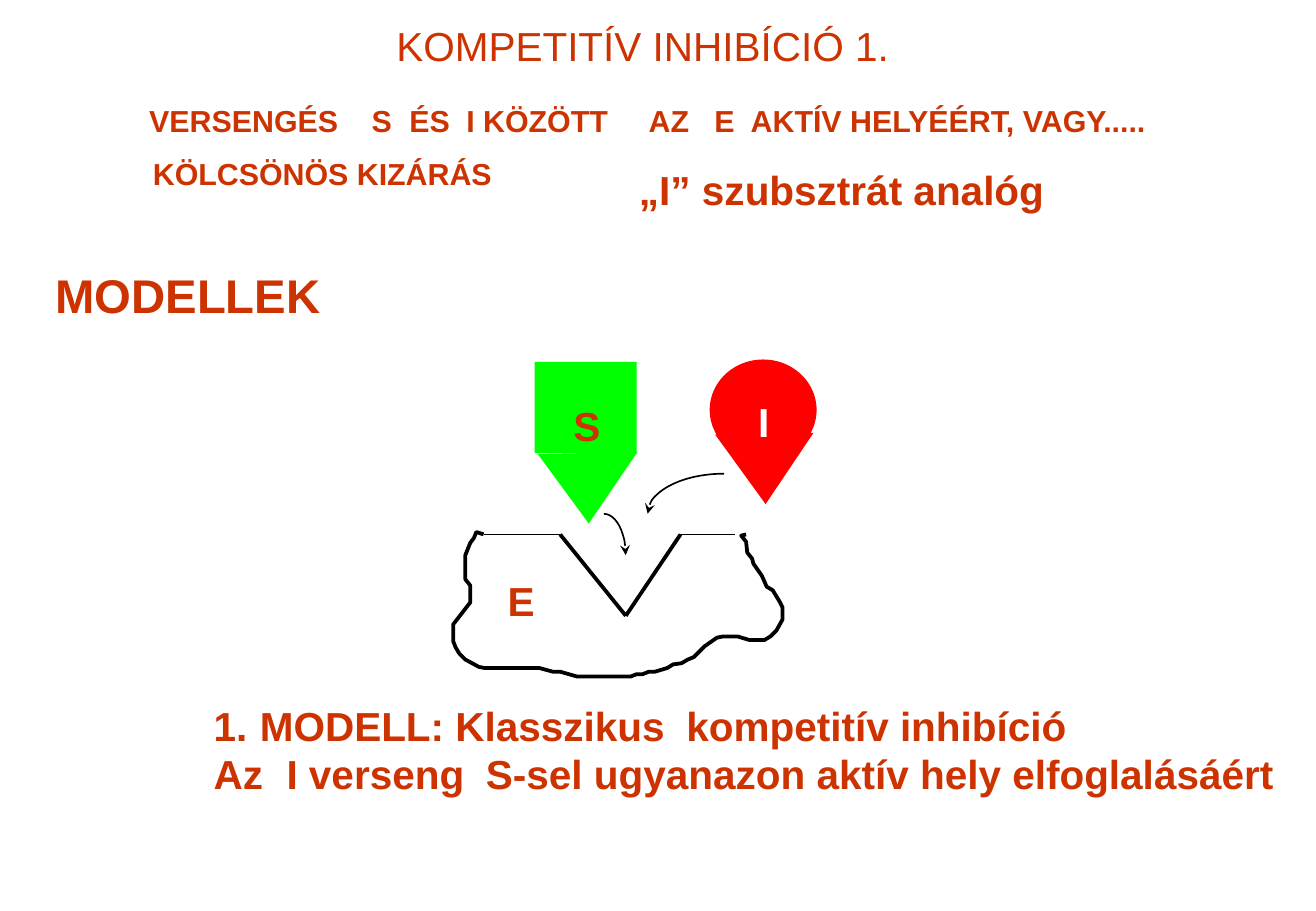
from dataclasses import dataclass

from lxml import etree
from pptx import Presentation
from pptx.dml.color import RGBColor
from pptx.enum.shapes import MSO_CONNECTOR, MSO_SHAPE
from pptx.enum.text import MSO_ANCHOR, PP_ALIGN
from pptx.oxml.ns import qn
from pptx.util import Inches, Pt

RECT, OVAL, ARC = MSO_SHAPE.RECTANGLE, MSO_SHAPE.OVAL, MSO_SHAPE.ARC
TRIANGLE = MSO_SHAPE.ISOSCELES_TRIANGLE
LINE = MSO_CONNECTOR.STRAIGHT
MIDDLE, CENTER, LEFT = MSO_ANCHOR.MIDDLE, PP_ALIGN.CENTER, PP_ALIGN.LEFT


@dataclass(frozen=True)
class Theme:
    font: str = "Arial"
    text: str = "CC3300"
    ink: str = "000000"
    light: str = "FFFFFF"
    substrate: str = "00FF00"
    inhibitor: str = "FF0000"
    small: float = 18
    body: float = 24
    large: float = 28
    thin: float = 1
    thick: float = 2.25


T = Theme()
COLS, ROWS = 1083, 750  # grid of 100 cells to the inch
CELL = Inches(0.01)

# Boxes are (column, row, width, height); a paragraph is (text, tab stops, numbered)
TITLE = ("KOMPETITÍV INHIBÍCIÓ 1.", (107, 0, 844, 75))
TEXTS = [
    ((113, 79, 880, 40), T.small,
     [("VERSENGÉS\tS\tÉS\tI KÖZÖTT\tAZ\tE\tAKTÍV HELYÉÉRT, VAGY.....",
       (183, 214, 261, 411, 465, 495), False)]),
    ((116, 123, 316, 40), T.small, [("KÖLCSÖNÖS KIZÁRÁS", (), False)]),
    ((516, 131, 459, 50), T.body, [("„I” szubsztrát analóg", (), False)]),
    ((36, 214, 260, 57), T.large, [("MODELLEK", (), False)]),
    ((166, 572, 917, 91), T.body,
     [("MODELL: Klasszikus\tkompetitív inhibíció", (389,), True),
      ("Az\tI verseng\tS-sel ugyanazon aktív hely elfoglalásáért", (60, 224), False)]),
]
NUMBER_INDENT = 38
INHIBITOR = [(TRIANGLE, (589, 357, 81, 58)), (OVAL, (584, 296, 88, 83))]
SUBSTRATE = [(RECT, (440, 298, 84, 75)), (TRIANGLE, (443, 373, 82, 58))]
LABELS = [("I", (614, 322, 30, 51), T.light),
          ("S", (462, 325, 43, 51), T.text),
          ("E", (408, 469, 43, 51), T.text)]
SURFACE = [(398, 440), (461, 440), (515, 507), (560, 440), (605, 440)]
SURFACE_WIDTHS = [T.thin, T.thick, T.thick, T.thin]
ENZYME = [
    (398, 440), (392, 438), (390, 443), (387, 447), (383, 457), (383, 477),
    (387, 482), (387, 496), (373, 514), (373, 528), (375, 533), (378, 538),
    (383, 543), (394, 549), (399, 550), (444, 550), (455, 553), (461, 553),
    (475, 557), (519, 557), (524, 555), (529, 555), (534, 553), (539, 553),
    (549, 550), (554, 547), (561, 546), (566, 543), (571, 541), (576, 536),
    (580, 532), (590, 525), (595, 524), (607, 524), (617, 527), (629, 527),
    (634, 524), (639, 519), (644, 510), (644, 500), (642, 496), (636, 486),
    (631, 483), (627, 474), (620, 464), (619, 460), (615, 455), (614, 446),
    (610, 441), (614, 440)]
# Quarter arcs: centre, radii, start and end angle, end that has the arrowhead
ARROWS = [((497, 457), (18, 34), (270, 0), "tailEnd"),
          ((596, 423), (63, 33), (180, 270), "headEnd")]


def grid(cells):
    return [round(c * CELL) for c in cells]


def add_run(p, text, size, color=T.text, bold=True):
    r = p.add_run()
    r.text = text
    r.font.name, r.font.size, r.font.bold = T.font, Pt(size), bold
    r.font.color.rgb = RGBColor.from_string(color)
    return r


def add_box(slide, box, wrap=True):
    tf = slide.shapes.add_textbox(*grid(box)).text_frame
    tf.word_wrap = wrap
    return tf


def set_layout(p, tabs, numbered):
    """Give a paragraph its number and its tab stops."""
    pPr = p._p.get_or_add_pPr()
    if numbered:
        indent = round(NUMBER_INDENT * CELL)
        pPr.set("marL", str(indent))
        pPr.set("indent", str(-indent))
        etree.SubElement(pPr, qn("a:buAutoNum"), type="arabicPeriod")
    if tabs:
        tab_list = etree.SubElement(pPr, qn("a:tabLst"))
        for pos in grid(tabs):
            etree.SubElement(tab_list, qn("a:tab"), pos=str(pos), algn="l")


def add_text(slide, box, size, paragraphs):
    tf = add_box(slide, box)
    for i, (text, tabs, numbered) in enumerate(paragraphs):
        p = tf.add_paragraph() if i else tf.paragraphs[0]
        p.alignment = LEFT
        set_layout(p, tabs, numbered)
        add_run(p, text, size)


def add_title(slide, text, box):
    tf = add_box(slide, box)
    tf.vertical_anchor = MIDDLE
    p = tf.paragraphs[0]
    p.alignment = CENTER
    r = add_run(p, text, T.body, bold=False)
    effects = etree.Element(qn("a:effectLst"))
    shadow = etree.SubElement(effects, qn("a:outerShdw"), dist="25400", dir="2700000")
    etree.SubElement(shadow, qn("a:srgbClr"), val=T.ink)
    r.font.fill._xPr.find(qn("a:solidFill")).addnext(effects)


def add_molecule(slide, parts, color):
    group = slide.shapes.add_group_shape()
    for kind, box in parts:
        sp = group.shapes.add_shape(kind, *grid(box))
        sp.shadow.inherit = False
        sp.fill.solid()
        sp.fill.fore_color.rgb = RGBColor.from_string(color)
        sp.line.fill.background()
        if kind == TRIANGLE:
            sp.rotation = 179


def set_line(sp, width):
    sp.line.color.rgb = RGBColor.from_string(T.ink)
    sp.line.width = Pt(width)


def add_enzyme(slide):
    for start, end, width in zip(SURFACE, SURFACE[1:], SURFACE_WIDTHS):
        line = slide.shapes.add_connector(LINE, *grid(start + end))
        set_line(line, width)
        etree.SubElement(line._element.spPr, qn("a:effectLst"))
    builder = slide.shapes.build_freeform(*ENZYME[0], scale=CELL)
    builder.add_line_segments(ENZYME[1:], close=False)
    sp = builder.convert_to_shape()
    sp.shadow.inherit = False
    sp.fill.background()
    set_line(sp, T.thick)


def add_arrow(slide, center, radii, angles, end):
    (x, y), (rx, ry) = center, radii
    sp = slide.shapes.add_shape(ARC, *grid((x - rx, y - ry, 2 * rx, 2 * ry)))
    sp.shadow.inherit = False
    sp.fill.background()
    for i, angle in enumerate(angles):
        sp.adjustments[i] = angle * 0.6  # 60000ths of a degree over 100000
    set_line(sp, T.thin)
    etree.SubElement(sp.line._get_or_add_ln(), qn(f"a:{end}"), type="stealth")


def main():
    prs = Presentation()
    prs.slide_width, prs.slide_height = grid((COLS, ROWS))
    slide = prs.slides.add_slide(prs.slide_layouts[6])
    add_title(slide, *TITLE)
    for text in TEXTS:
        add_text(slide, *text)
    add_molecule(slide, INHIBITOR, T.inhibitor)
    add_molecule(slide, SUBSTRATE, T.substrate)
    add_enzyme(slide)
    for arrow in ARROWS:
        add_arrow(slide, *arrow)
    for text, box, color in LABELS:
        add_run(add_box(slide, box, wrap=False).paragraphs[0], text, T.body, color)
    prs.save("out.pptx")


if __name__ == "__main__":
    main()
